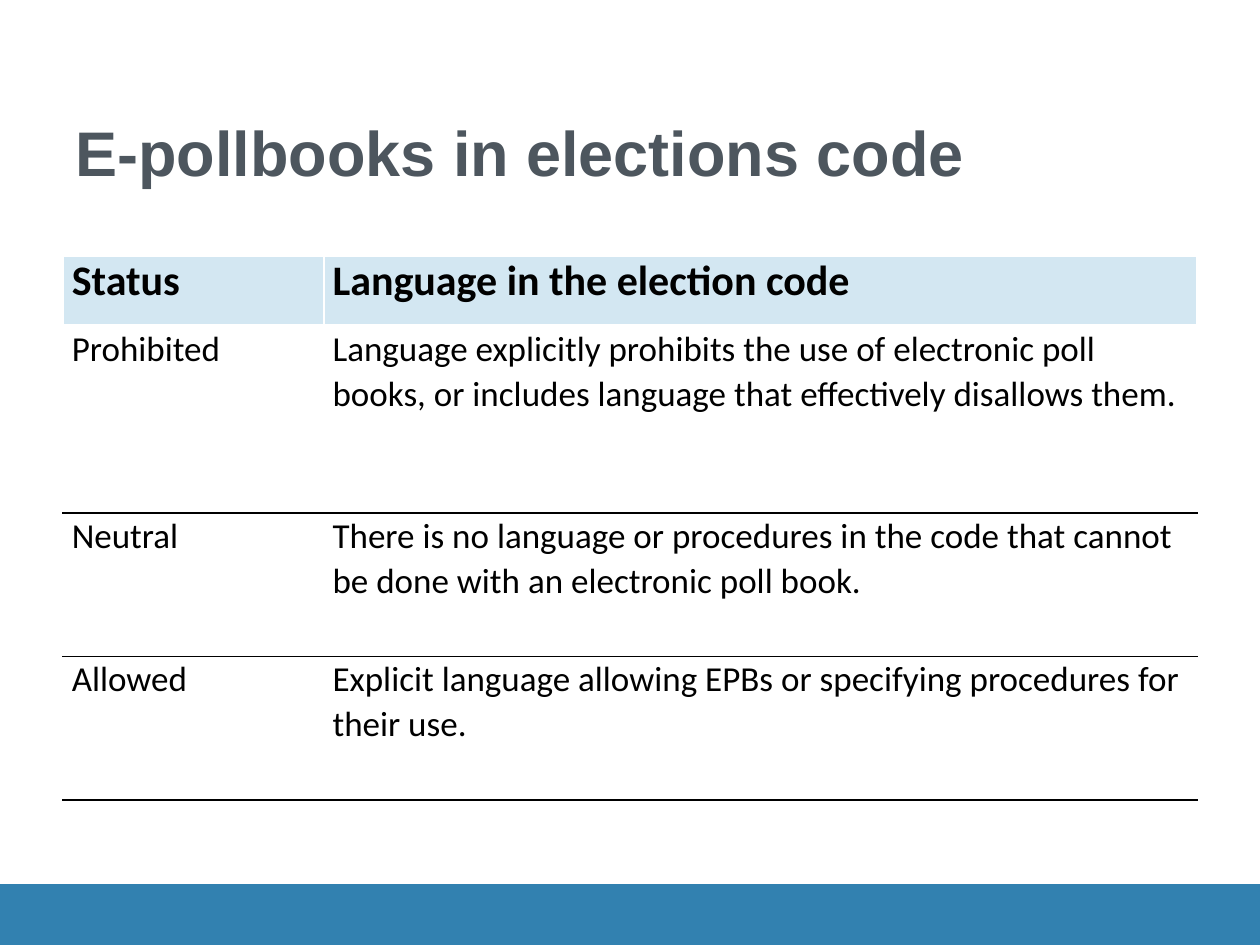
import dataclasses

import lxml.etree
import pptx
import pptx.dml.color
import pptx.enum.shapes
import pptx.enum.text
import pptx.oxml.ns
import pptx.util

Inches = pptx.util.Inches
Pt = pptx.util.Pt


@dataclasses.dataclass(frozen=True)
class Theme:
    title_font: str = "Arial"
    table_font: str = "Calibri"
    title_size: int = 36
    header_size: int = 24
    body_size: int = 20
    title_color: str = "4D565E"
    text_color: str = "000000"
    rule_color: str = "000000"
    header_fill: str = "D3E7F2"
    background: str = "FFFFFF"
    footer_color: str = "3281B0"


def rgb(value):
    return pptx.dml.color.RGBColor.from_string(value)


class SlideBuilder:
    def __init__(self, slide, theme):
        self.slide = slide
        self.theme = theme

    def format_runs(self, paragraph, font_name, size, color, bold):
        for run in paragraph.runs:
            run.font.name = font_name
            run.font.size = Pt(size)
            run.font.color.rgb = rgb(color)
            run.font.bold = bold

    def title(self, text, left, top, width, height):
        shape = self.slide.shapes.title
        shape.left, shape.top, shape.width, shape.height = left, top, width, height
        text_frame = shape.text_frame
        text_frame.text = text
        text_frame.word_wrap = True
        text_frame.vertical_anchor = pptx.enum.text.MSO_ANCHOR.BOTTOM
        paragraph = text_frame.paragraphs[0]
        paragraph.alignment = pptx.enum.text.PP_ALIGN.LEFT
        self.format_runs(paragraph, self.theme.title_font, self.theme.title_size,
                         self.theme.title_color, True)

    def footer_bar(self, left, top, width, height):
        shape = self.slide.shapes.add_shape(
            pptx.enum.shapes.MSO_SHAPE.RECTANGLE, left, top, width, height)
        shape.shadow.inherit = False
        shape.fill.solid()
        shape.fill.fore_color.rgb = rgb(self.theme.footer_color)
        shape.line.color.rgb = rgb(self.theme.footer_color)
        shape.line.width = Pt(0.75)

    def cell_borders(self, cell, borders):
        """Add borders given as side: (colour, points), in the order L, R, T, B."""
        properties = cell._tc.get_or_add_tcPr()
        qualified = pptx.oxml.ns.qn
        for position, (side, (color, points)) in enumerate(borders.items()):
            line = lxml.etree.Element(qualified(f"a:ln{side}"), w=str(Pt(points)))
            fill = lxml.etree.SubElement(line, qualified("a:solidFill"))
            lxml.etree.SubElement(fill, qualified("a:srgbClr"), val=color)
            properties.insert(position, line)

    def table_cell(self, cell, text, is_header, borders):
        theme = self.theme
        cell.margin_left = cell.margin_right = Inches(0.07)
        cell.margin_top = cell.margin_bottom = 0
        cell.fill.solid()
        cell.fill.fore_color.rgb = rgb(theme.header_fill if is_header else theme.background)
        cell.text_frame.text = text
        paragraph = cell.text_frame.paragraphs[0]
        paragraph.space_before = paragraph.space_after = Pt(3)
        if not is_header:
            paragraph.line_spacing = 1.05
        size = theme.header_size if is_header else theme.body_size
        self.format_runs(paragraph, theme.table_font, size, theme.text_color, is_header)
        self.cell_borders(cell, borders)

    def table(self, rows, left, top, column_widths, row_heights):
        table = self.slide.shapes.add_table(
            len(rows), len(column_widths), left, top,
            sum(column_widths), sum(row_heights)).table
        table.horz_banding = False
        for column, width in zip(table.columns, column_widths):
            column.width = width
        for row, height in zip(table.rows, row_heights):
            row.height = height

        blank = (self.theme.background, 1)
        rule = (self.theme.rule_color, 1)
        for row_index, texts in enumerate(rows):
            is_header = row_index == 0
            borders = {
                "L": blank,
                "R": blank,
                "T": rule if row_index > 1 else blank,
                "B": (self.theme.background, 3) if is_header else rule,
            }
            for column_index, text in enumerate(texts):
                self.table_cell(table.cell(row_index, column_index), text, is_header, borders)


def main():
    presentation = pptx.Presentation()
    presentation.slide_width = Inches(10)
    presentation.slide_height = Inches(7.5)
    title_only_layout = presentation.slide_layouts[5]
    slide = presentation.slides.add_slide(title_only_layout)
    builder = SlideBuilder(slide, Theme())

    builder.footer_bar(0, Inches(7.02), Inches(10), Inches(0.5))
    builder.title("E-pollbooks in elections code",
                  Inches(0.5), Inches(0.3), Inches(9), Inches(1.25))
    rows = [
        ("Status", "Language in the election code"),
        ("Prohibited", "Language explicitly prohibits the use of electronic poll books, "
                       "or includes language that effectively disallows them."),
        ("Neutral", "There is no language or procedures in the code that cannot "
                    "be done with an electronic poll book."),
        ("Allowed", "Explicit language allowing EPBs or specifying procedures "
                    "for their use."),
    ]
    builder.table(rows, Inches(0.5), Inches(2.03),
                  [Inches(2.07), Inches(6.93)],
                  [Inches(0.56), Inches(1.48), Inches(1.14), Inches(1.14)])

    presentation.save("out.pptx")


if __name__ == "__main__":
    main()
